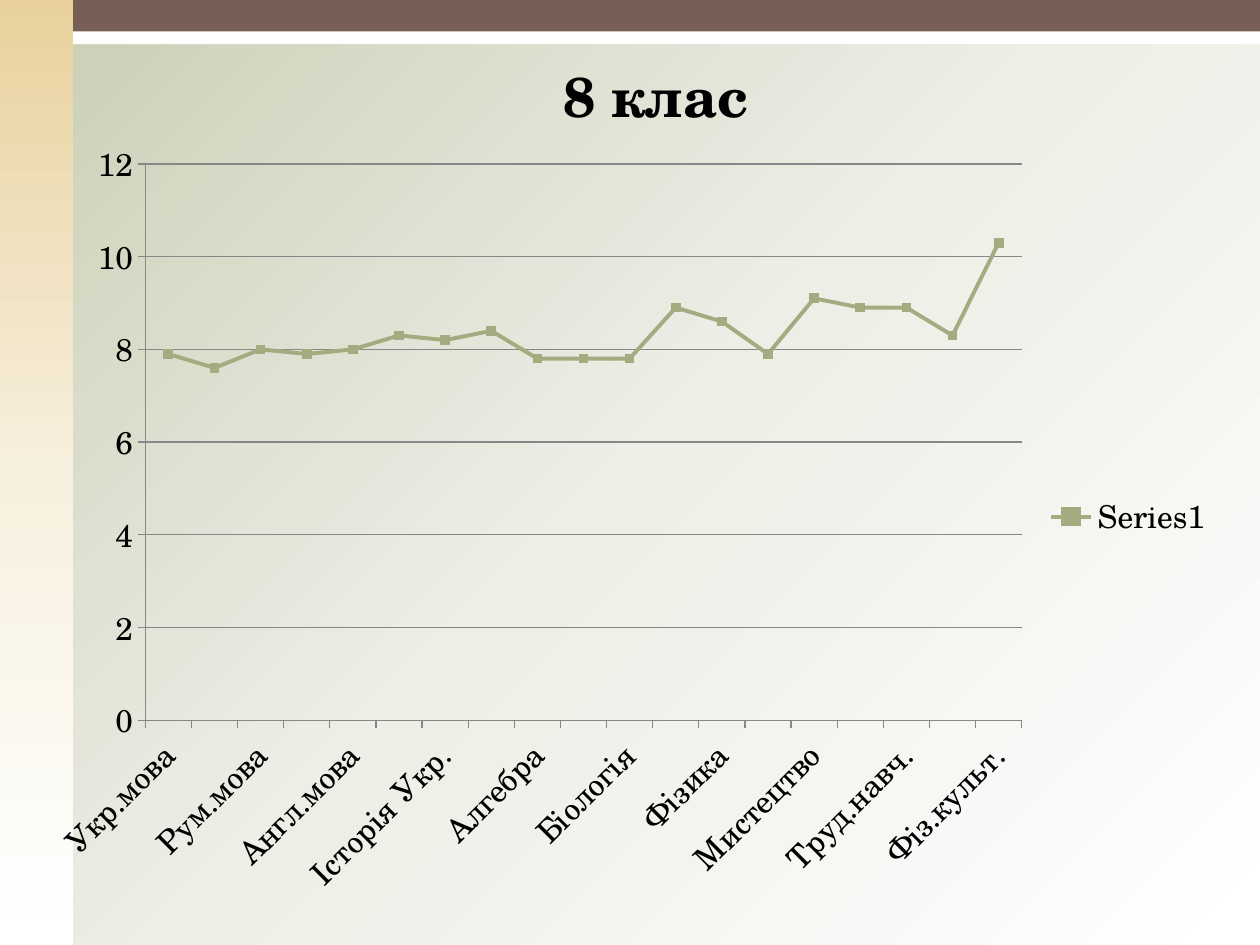
"""Build a slide with a line chart of average marks by subject for one class."""
from copy import deepcopy
from dataclasses import dataclass

from lxml import etree
from pptx import Presentation
from pptx.chart.data import CategoryChartData
from pptx.dml.color import RGBColor
from pptx.enum.chart import XL_CHART_TYPE, XL_LEGEND_POSITION, XL_MARKER_STYLE, XL_TICK_MARK
from pptx.enum.shapes import MSO_SHAPE
from pptx.enum.text import MSO_ANCHOR, MSO_AUTO_SIZE, PP_ALIGN
from pptx.oxml.ns import qn
from pptx.util import Inches, Pt

LINE_CHART = XL_CHART_TYPE.LINE_MARKERS_STACKED
LEGEND_RIGHT = XL_LEGEND_POSITION.RIGHT
SQUARE = XL_MARKER_STYLE.SQUARE
TICK_OUTSIDE = XL_TICK_MARK.OUTSIDE
RECTANGLE = MSO_SHAPE.RECTANGLE
TOP = MSO_ANCHOR.TOP
NO_FIT = MSO_AUTO_SIZE.NONE
CENTER = PP_ALIGN.CENTER
GRID_UNIT = Inches(0.1)
COLUMNS, ROWS = 100, 75
SIDE, HEADER, STRIPE = 5.8, 3.5, 2.5


@dataclass(frozen=True)
class Theme:
    """Colours, font and type sizes of the slide."""
    font: str = "TeX Gyre Schola"
    text: str = "000000"
    white: str = "FFFFFF"
    brown: str = "775F55"
    series: str = "A5AB81"
    axis: str = "878787"
    sand: tuple = ("E8D19D", "F7F0DE", "FFFFFF")
    sage: tuple = ("C9CDB3", "EDEEE6", "FFFFFF")
    title_size: int = 32
    chart_size: int = 18


@dataclass(frozen=True)
class Area:
    """A rectangle in columns and rows of the slide grid."""
    column: float
    row: float
    columns: float
    rows: float

    def lengths(self) -> tuple:
        """Return left, top, width and height as slide lengths."""
        return tuple(int(value * GRID_UNIT)
                     for value in (self.column, self.row, self.columns, self.rows))


@dataclass(frozen=True)
class Band:
    """A decorative band with one colour or a gradient of several."""
    area: Area
    colors: tuple


THEME = Theme()
BANDS = (
    Band(Area(0, 0, COLUMNS, HEADER), (THEME.white,)),
    Band(Area(0, 0, SIDE, ROWS), THEME.sand),
    Band(Area(SIDE, 0, COLUMNS - SIDE, STRIPE), (THEME.brown,)),
)
TITLE_AREA = Area(8.3, 4.4, 87.5, 12.1)
CHART_AREA = Area(2, 9.9, 95.3, 62.2)
PLOT_SHARES = {"x": 0.1, "y": 0.05, "w": 0.73, "h": 0.71}
MARKS = {
    "Укр.мова": 7.9, "Укр.літ.": 7.6, "Рум.мова": 8, "Літ.рум.": 7.9,
    "Англ.мова": 8, "Фр.мова": 8.3, "Історія Укр.": 8.2, "Всесв. Іст.": 8.4,
    "Алгебра": 7.8, "Геометрія": 7.8, "Біологія": 7.8, "Географія": 8.9,
    "Фізика": 8.6, "Хімія": 7.9, "Мистецтво": 9.1, "Інформатика": 8.9,
    "Труд.навч.": 8.9, "Осн.зд.": 8.3, "Фіз.культ.": 10.3,
}


def color(value: str) -> RGBColor:
    """Turn a hexadecimal value into a colour."""
    return RGBColor.from_string(value)


def paint_gradient(fill, owner, colors: tuple, angle: int) -> None:
    """Fill with evenly spaced colours at a counter-clockwise angle."""
    fill.gradient()
    fill.gradient_angle = angle
    stops = next(owner.iter(qn("a:gsLst")))
    for _ in colors[2:]:
        stops.append(deepcopy(stops[0]))
    for index, (stop, value) in enumerate(zip(fill.gradient_stops, colors)):
        stop.color.rgb = color(value)
        stop.position = index / (len(colors) - 1)


def draw_band(page, band: Band) -> None:
    """Draw one band without outline or shadow."""
    shape = page.shapes.add_shape(RECTANGLE, *band.area.lengths())
    shape.shadow.inherit = False
    shape.line.fill.background()
    if len(band.colors) > 1:
        paint_gradient(shape.fill, shape.element, band.colors, 270)
    else:
        shape.fill.solid()
        shape.fill.fore_color.rgb = color(band.colors[0])


def style_font(font, *, size: int, bold: bool = False) -> None:
    """Apply the theme font and text colour."""
    font.name = THEME.font
    font.size = Pt(size)
    font.bold = bold
    font.color.rgb = color(THEME.text)


def write_title(box, text: str, *, area: Area, size: int, bold: bool) -> None:
    """Place and format the title placeholder."""
    box.left, box.top, box.width, box.height = area.lengths()
    frame = box.text_frame
    frame.auto_size = NO_FIT
    frame.vertical_anchor = TOP
    frame.word_wrap = True
    para = frame.paragraphs[0]
    para.alignment = CENTER
    para.space_before = Pt(7)
    span = para.add_run()
    span.text = text
    style_font(span.font, size=size, bold=bold)


def style_line(line, value: str, width: float) -> None:
    """Give a line its colour and width in points."""
    line.color.rgb = color(value)
    line.width = Pt(width)


def place_plot(chart) -> None:
    """Fix the inner plot area at its shares of the chart."""
    plot_area = chart.element.chart.plotArea
    for old in plot_area.findall(qn("c:layout")):
        plot_area.remove(old)
    layout = etree.Element(qn("c:layout"))
    manual = etree.SubElement(layout, qn("c:manualLayout"))
    settings = {"layoutTarget": "inner", "xMode": "edge", "yMode": "edge", **PLOT_SHARES}
    for name, value in settings.items():
        etree.SubElement(manual, qn(f"c:{name}")).set("val", str(value))
    plot_area.insert(0, layout)


def draw_chart(page, marks: dict, area: Area) -> None:
    """Draw the marks as a line with square markers."""
    data = CategoryChartData()
    data.categories = list(marks)
    data.add_series("Series1", list(marks.values()))
    chart = page.shapes.add_chart(LINE_CHART, *area.lengths(), data).chart
    chart.has_title = False
    chart.has_legend = True
    chart.legend.position = LEGEND_RIGHT
    chart.legend.include_in_layout = False
    style_font(chart.font, size=THEME.chart_size)
    chart.plots[0].vary_by_categories = False

    series = chart.plots[0].series[0]
    series.smooth = False
    style_line(series.format.line, THEME.series, 2.25)
    series.marker.style = SQUARE
    series.marker.size = 5
    series.marker.format.fill.solid()
    series.marker.format.fill.fore_color.rgb = color(THEME.series)
    style_line(series.marker.format.line, THEME.series, 0.75)

    values, subjects = chart.value_axis, chart.category_axis
    for axis in (values, subjects):
        axis.major_tick_mark = TICK_OUTSIDE
        style_line(axis.format.line, THEME.axis, 0.75)
        style_font(axis.tick_labels.font, size=THEME.chart_size)
    values.minimum_scale, values.maximum_scale, values.major_unit = 0, 12, 2
    values.has_major_gridlines = True
    style_line(values.major_gridlines.format.line, THEME.axis, 0.75)
    next(subjects._element.iter(qn("a:bodyPr"))).set("rot", "-2700000")
    place_plot(chart)


def main() -> None:
    """Build the deck and save it."""
    deck = Presentation()
    deck.slide_width, deck.slide_height = COLUMNS * GRID_UNIT, ROWS * GRID_UNIT
    page = deck.slides.add_slide(deck.slide_layouts.get_by_name("Title Only"))
    paint_gradient(page.background.fill, page.element, THEME.sage, 315)
    for band in BANDS:
        draw_band(page, band)
    write_title(page.shapes.title, "8 клас", area=TITLE_AREA, size=THEME.title_size, bold=True)
    draw_chart(page, MARKS, CHART_AREA)
    deck.save("out.pptx")


if __name__ == "__main__":
    main()
